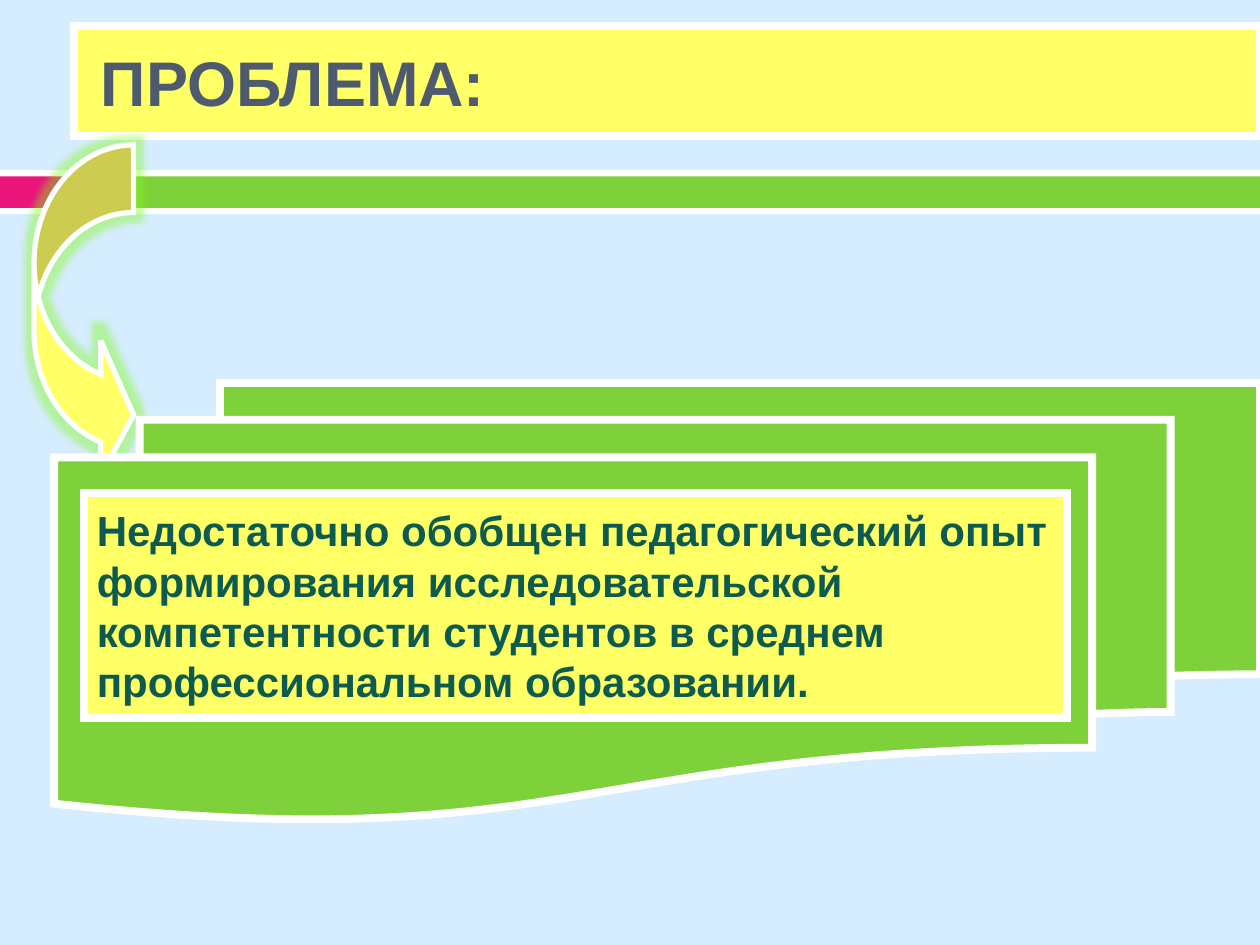
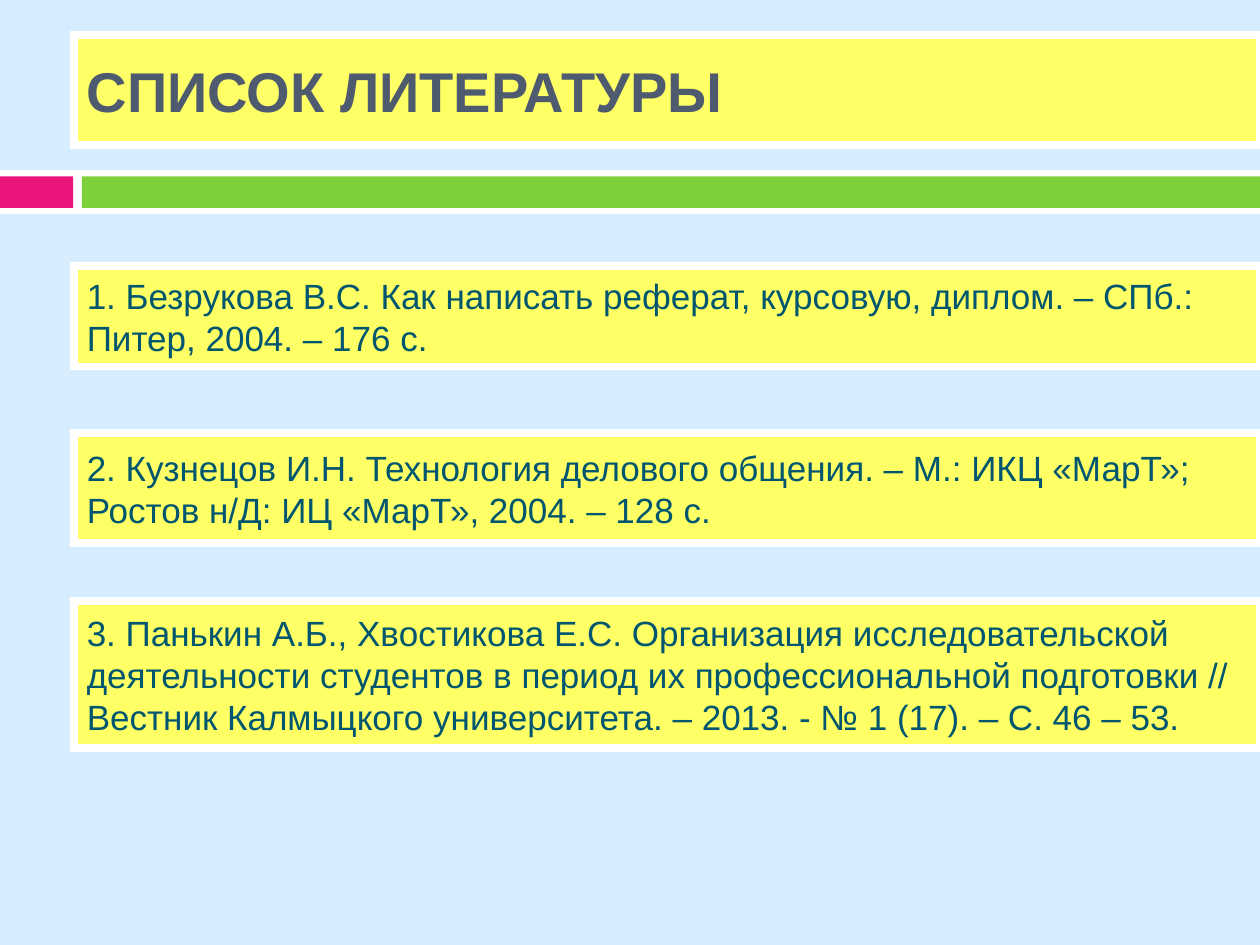
from lxml import etree
from pptx import Presentation, util as u
from pptx.dml.color import RGBColor
from pptx.enum import shapes, text
from pptx.oxml.ns import qn

WIDTH, HEIGHT = 10, 7.5
MARGIN = 0.59                      # left edge of the panels that run to the right side
FULL = WIDTH - MARGIN
SKY, WHITE, YELLOW = "D6ECFF", "FFFFFF", "FFFF66"
GREEN, PINK, GLOW = "7FD13B", "EA157A", "7CFD0F"
SLATE, TEAL, PINE = "4E5B6F", "00566E", "0D5A4F"
FONT = "Arial"
PRESET = shapes.MSO_SHAPE

PROBLEM = ("Недостаточно обобщен педагогический опыт формирования исследовательской "
           "компетентности студентов в среднем профессиональном образовании.")

# Top, height and wording of each reference
REFERENCES = [
    (2.11, 0.8, "1. Безрукова В.С. Как написать реферат, курсовую, диплом. – СПб.: "
                "Питер, 2004. – 176 с."),
    (3.44, 0.87, "2. Кузнецов И.Н. Технология делового общения. – М.: ИКЦ «МарТ»; "
                 "Ростов н/Д: ИЦ «МарТ», 2004. – 128 с."),
    (4.77, 1.17, "3. Панькин А.Б., Хвостикова Е.С. Организация исследовательской "
                 "деятельности студентов в период их профессиональной подготовки // "
                 "Вестник Калмыцкого университета. – 2013. - № 1 (17). – С. 46 – 53."),
]


def color(hex_string):
    return RGBColor.from_string(hex_string)


def add_figure(slide, preset, box, fill, outline=0):
    """Filled shape with an optional white, sharp-cornered outline (points)."""
    figure = slide.shapes.add_shape(preset, *(u.Inches(side) for side in box))
    figure.shadow.inherit = False
    figure.fill.solid()
    figure.fill.fore_color.rgb = color(fill)
    if outline:
        figure.line.color.rgb = color(WHITE)
        figure.line.width = u.Pt(outline)
        line = figure._element.spPr.find(qn("a:ln"))
        etree.SubElement(line, qn("a:miter"), lim="800000")
    else:
        figure.line.fill.background()
    return figure


def add_panel(slide, box, words, size, ink, bold=False, inset=0.1):
    """Yellow panel with left-aligned text."""
    panel = add_figure(slide, PRESET.RECTANGLE, box, YELLOW, 4.5)
    frame = panel.text_frame
    frame.word_wrap = True
    frame.vertical_anchor = text.MSO_ANCHOR.MIDDLE
    frame.margin_left = u.Inches(inset)
    paragraph = frame.paragraphs[0]
    paragraph.alignment = text.PP_ALIGN.LEFT
    run = paragraph.add_run()
    run.text = words
    run.font.name, run.font.size, run.font.bold = FONT, u.Pt(size), bold
    run.font.color.rgb = color(ink)


def add_title(slide, top, words, size, inset=0.1):
    add_panel(slide, (MARGIN, top, FULL, 0.87), words, size, SLATE, True, inset)


def add_glow(figure, radius, hex_string, alpha):
    effects = figure._element.spPr.find(qn("a:effectLst"))
    glow = etree.SubElement(effects, qn("a:glow"), rad=str(u.Pt(radius)))
    tint = etree.SubElement(glow, qn("a:srgbClr"), val=hex_string)
    etree.SubElement(tint, qn("a:alpha"), val=str(alpha * 1000))


def add_base(deck):
    """Blank slide with the background and the divider band."""
    slide = deck.slides.add_slide(deck.slide_layouts[6])
    slide.background.fill.solid()
    slide.background.fill.fore_color.rgb = color(SKY)
    add_figure(slide, PRESET.RECTANGLE, (0, 1.35, WIDTH, 0.35), WHITE)
    for left, right, fill in ((0, 0.58, PINK), (0.65, WIDTH, GREEN)):
        add_figure(slide, PRESET.RECTANGLE, (left, 1.4, right - left, 0.25), fill)
    return slide


def build_problem(deck):
    slide = add_base(deck)
    add_title(slide, 0.21, "ПРОБЛЕМА:", 36, inset=0.21)
    arrow = add_figure(slide, PRESET.CURVED_RIGHT_ARROW, (0.27, 1.15, 0.79, 2.68), YELLOW, 3)
    for index, share in enumerate((0.68, 1.36, 0.33)):
        arrow.adjustments[index] = share
    add_glow(arrow, 8, GLOW, 40)
    add_figure(slide, PRESET.FLOWCHART_MULTIDOCUMENT, (0.43, 3.04, 9.57, 3.47), GREEN, 4.5)
    add_panel(slide, (0.67, 3.91, 7.8, 1.79), PROBLEM, 24, PINE, bold=True)


def build_references(deck):
    slide = add_base(deck)
    add_title(slide, 0.28, "СПИСОК ЛИТЕРАТУРЫ", 32)
    for top, height, reference in REFERENCES:
        add_panel(slide, (MARGIN, top, FULL, height), reference, 20, TEAL)


def main():
    deck = Presentation()
    deck.slide_width, deck.slide_height = u.Inches(WIDTH), u.Inches(HEIGHT)
    build_problem(deck)
    build_references(deck)
    deck.save("out.pptx")


if __name__ == "__main__":
    main()
